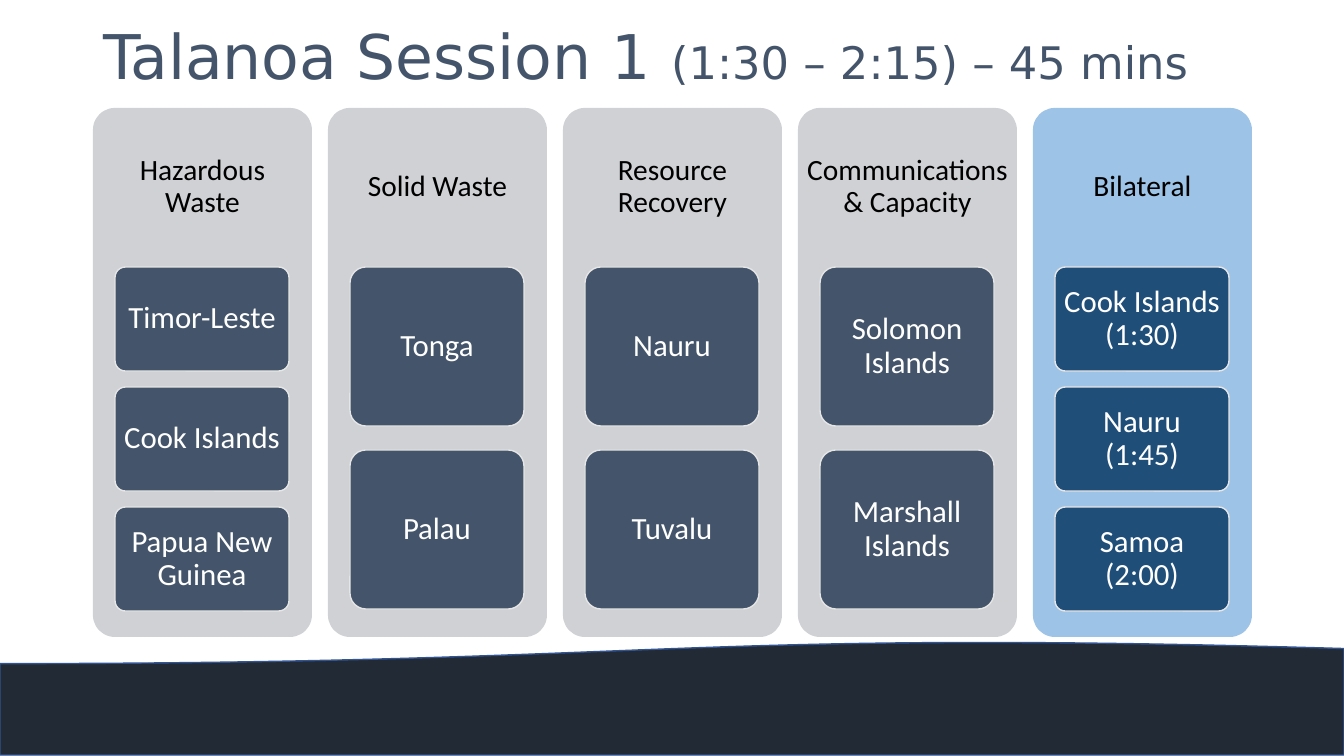
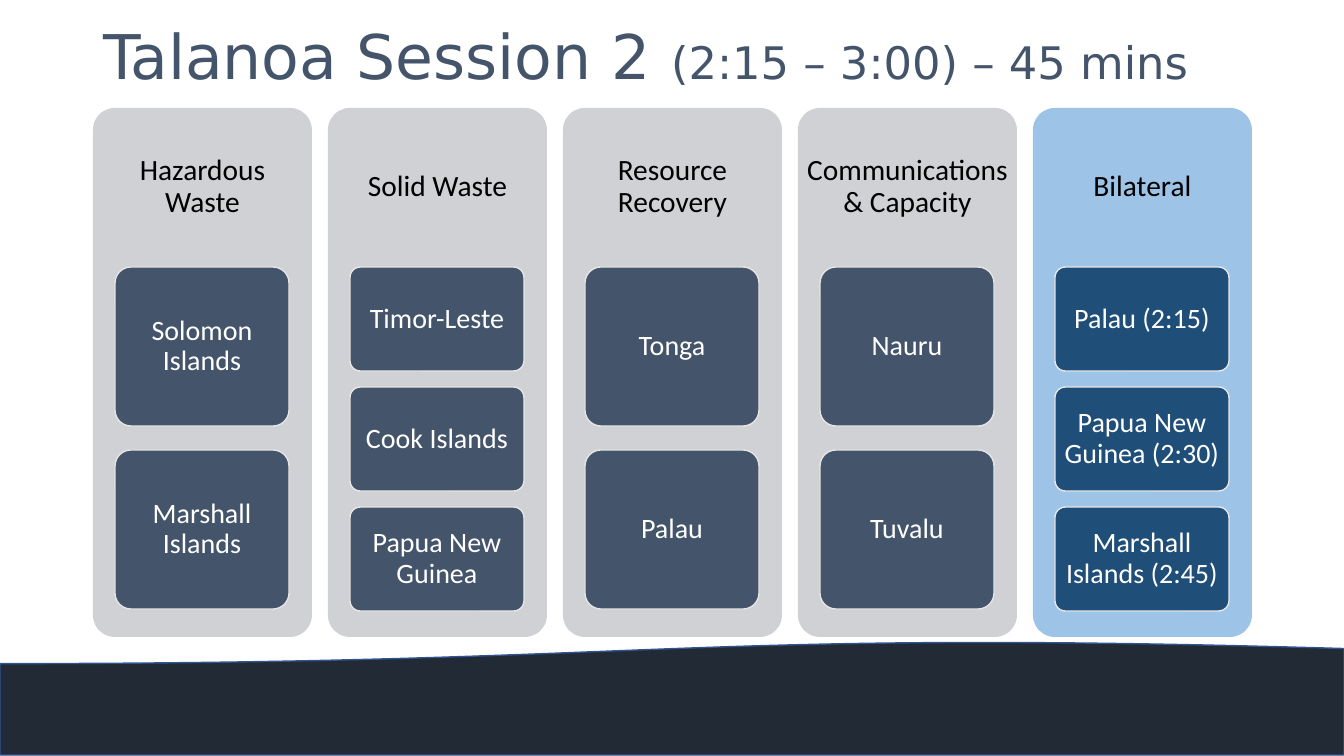
from pptx import Presentation
from pptx.dml.color import RGBColor
from pptx.enum.shapes import MSO_SHAPE as SHAPE
from pptx.enum.text import MSO_ANCHOR as ANCHOR, MSO_AUTO_SIZE as AUTO_SIZE, PP_ALIGN as ALIGN
from pptx.util import Pt

SLIDE_W, SLIDE_H = 1344, 756
PX = 12192000 / SLIDE_W

WHITE = RGBColor(0xFF, 0xFF, 0xFF)
BLACK = RGBColor(0x00, 0x00, 0x00)
SLATE = RGBColor(0x44, 0x54, 0x6A)
NAVY = RGBColor(0x22, 0x2A, 0x35)
BAND_EDGE = RGBColor(0x32, 0x54, 0x91)
CARD_EDGE = RGBColor(0xE7, 0xE6, 0xE6)
GREY = RGBColor(0xCF, 0xD1, 0xD4)
LIGHT_BLUE = RGBColor(0x9D, 0xC3, 0xE6)
DEEP_BLUE = RGBColor(0x1F, 0x4E, 0x79)

TITLE_FONT, BODY_FONT = "DejaVu Sans", "Calibri"

COLUMN_LEFT, COLUMN_TOP, COLUMN_W, COLUMN_H, COLUMN_PITCH = 93, 108, 219, 529, 235
HEADING_H = 158
CARD_INDENT, CARD_W, CARDS_TOP, CARDS_H = 22, 174, 267, 343
GAP_RATIO = 2 / 13  # gap between cards as a share of card height

TOPICS = [
    ("Hazardous Waste", GREY, SLATE),
    ("Solid Waste", GREY, SLATE),
    ("Resource Recovery", GREY, SLATE),
    ("Communications & Capacity", GREY, SLATE),
    ("Bilateral", LIGHT_BLUE, DEEP_BLUE),
]

SESSIONS = [
    ("Talanoa Session 1 ", "(1:30 – 2:15) – 45 mins", 22, [
        ["Timor-Leste", "Cook Islands", "Papua New Guinea"],
        ["Tonga", "Palau"],
        ["Nauru", "Tuvalu"],
        ["Solomon Islands", "Marshall Islands"],
        ["Cook Islands (1:30)", "Nauru (1:45)", "Samoa (2:00)"],
    ]),
    ("Talanoa Session 2 ", "(2:15 – 3:00) – 45 mins", 20, [
        ["Solomon Islands", "Marshall Islands"],
        ["Timor-Leste", "Cook Islands", "Papua New Guinea"],
        ["Tonga", "Palau"],
        ["Nauru", "Tuvalu"],
        ["Palau (2:15)", "Papua New Guinea (2:30)", "Marshall Islands (2:45)"],
    ]),
]


def add_panel(slide, preset, box, fill, edge=None):
    panel = slide.shapes.add_shape(preset, *(round(v * PX) for v in box))
    panel.shadow.inherit = False
    panel.fill.solid()
    panel.fill.fore_color.rgb = fill
    if edge is None:
        panel.line.fill.background()
    else:
        panel.line.color.rgb = edge
        panel.line.width = Pt(1)
    if preset == SHAPE.ROUNDED_RECTANGLE:
        panel.adjustments[0] = 0.1
    return panel


def write_label(frame, text, size, color, inset):
    """Centre one wrapped paragraph in the frame, with the inset in px."""
    frame.word_wrap = True
    frame.auto_size = AUTO_SIZE.NONE
    frame.vertical_anchor = ANCHOR.MIDDLE
    frame.margin_left = frame.margin_right = round(inset * PX)
    frame.margin_top = frame.margin_bottom = round(inset * PX)
    line = frame.paragraphs[0]
    line.alignment = ALIGN.CENTER
    line.line_spacing = 0.9
    run = line.add_run()
    run.text = text
    run.font.name = BODY_FONT
    run.font.size = Pt(size)
    run.font.color.rgb = color


prs = Presentation()
prs.slide_width = round(SLIDE_W * PX)
prs.slide_height = round(SLIDE_H * PX)

layout = prs.slide_layouts[5]
layout_title = layout.placeholders[0]
layout_title.left, layout_title.top = round(93 * PX), round(11 * PX)
layout_title.width, layout_title.height = round(1159 * PX), round(98 * PX)

for number, (name, time, card_size, columns) in enumerate(SESSIONS):
    slide = prs.slides.add_slide(layout)

    if number == 0:
        # The wave band belongs to the layout, behind its placeholders.
        wave = add_panel(slide, SHAPE.FLOWCHART_DOCUMENT, (0, 641, SLIDE_W, 114), NAVY, BAND_EDGE)
        wave.rotation = 180
        layout.shapes.element.insert(2, wave.element)

    title = slide.shapes.title.text_frame
    title.auto_size = AUTO_SIZE.NONE
    title.vertical_anchor = ANCHOR.MIDDLE
    heading = title.paragraphs[0]
    heading.alignment = ALIGN.LEFT
    heading.line_spacing = 0.9
    for text, size in ((name, 44), (time, 32)):
        run = heading.add_run()
        run.text = text
        run.font.name = TITLE_FONT
        run.font.size = Pt(size)
        run.font.color.rgb = SLATE

    for index, ((topic, column_fill, card_fill), countries) in enumerate(zip(TOPICS, columns)):
        left = COLUMN_LEFT + index * COLUMN_PITCH
        add_panel(slide, SHAPE.ROUNDED_RECTANGLE, (left, COLUMN_TOP, COLUMN_W, COLUMN_H), column_fill)
        heading_box = (left, COLUMN_TOP, COLUMN_W, HEADING_H)
        topic_label = slide.shapes.add_textbox(*(round(v * PX) for v in heading_box))
        write_label(topic_label.text_frame, topic, 21, BLACK, 8)

        count = len(countries)
        card_h = round(CARDS_H / (count + (count - 1) * GAP_RATIO))
        card_pitch = round(card_h * (1 + GAP_RATIO))
        for row, country in enumerate(countries):
            card_box = (left + CARD_INDENT, CARDS_TOP + row * card_pitch, CARD_W, card_h)
            card = add_panel(slide, SHAPE.ROUNDED_RECTANGLE, card_box, card_fill, CARD_EDGE)
            write_label(card.text_frame, country, card_size, WHITE, 5)

prs.save("out.pptx")
